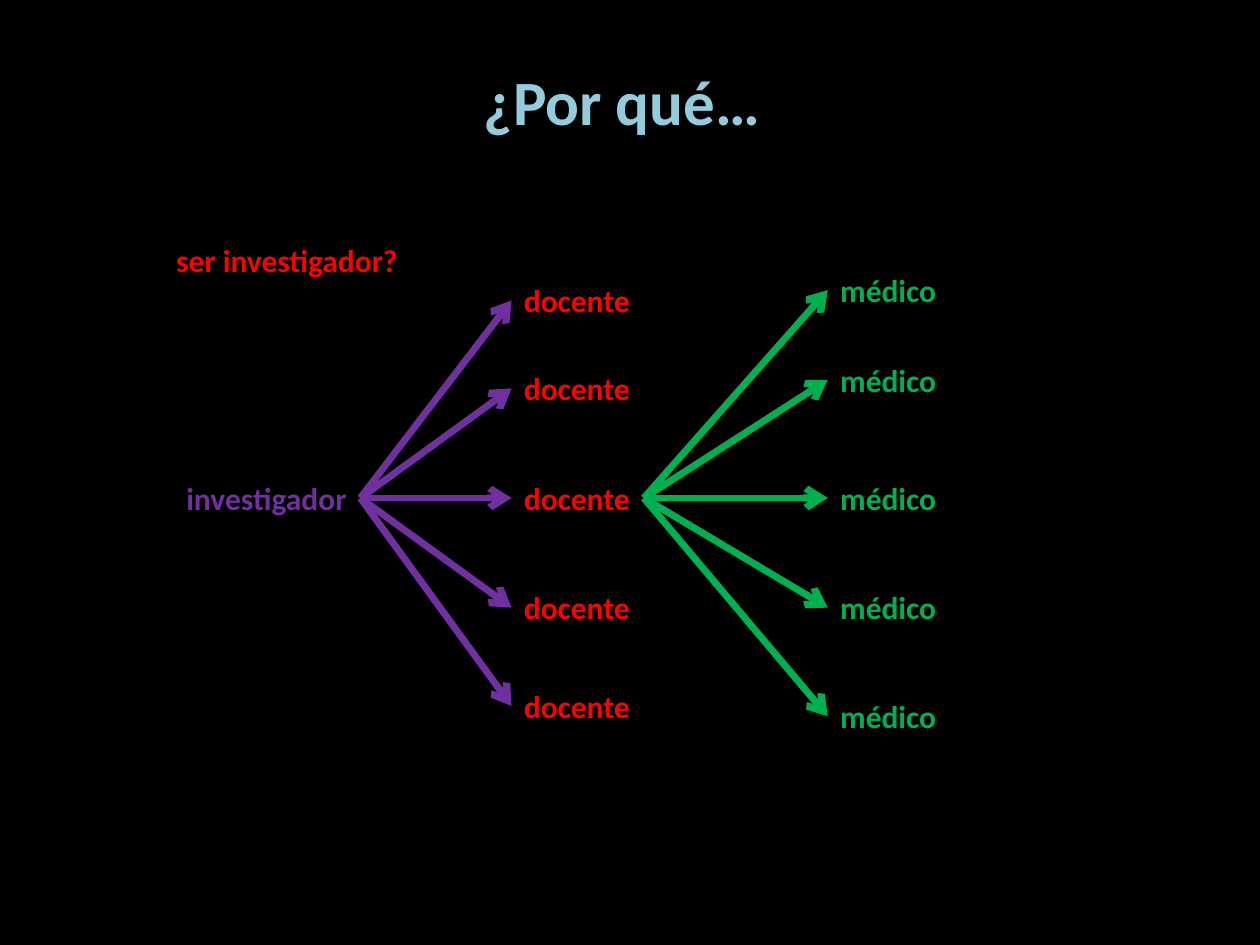
from dataclasses import dataclass

from lxml import etree
from pptx import Presentation
from pptx import util as u
from pptx.dml.color import RGBColor
from pptx.enum import shapes, text
from pptx.oxml.ns import qn


@dataclass(frozen=True)
class Theme:
    """Colours, font and sizes of the slide."""
    background: str = "000000"
    heading: str = "93CDDD"
    teacher: str = "FF0000"
    doctor: str = "00B050"
    researcher: str = "7030A0"
    font: str = "Calibri"
    heading_size: int = 36
    label_size: int = 18
    arrow_width: int = 4


@dataclass(frozen=True)
class Box:
    """A region in percent of the slide's width and height."""
    left: float
    top: float
    width: float
    height: float = 5.4

    def shifted(self, rows):
        """Return the same region moved down by a share of the height."""
        return Box(self.left, self.top + rows, self.width, self.height)

    def emu(self):
        """Return left, top, width and height in slide units."""
        return (int(SLIDE_WIDTH * self.left / 100), int(SLIDE_HEIGHT * self.top / 100),
                int(SLIDE_WIDTH * self.width / 100), int(SLIDE_HEIGHT * self.height / 100))


THEME = Theme()
SLIDE_WIDTH, SLIDE_HEIGHT = u.Inches(10), u.Inches(7.5)
TOP, LEFT, BOTTOM, RIGHT = range(4)
TEACHER_ROWS = (-20.9, -11.6, 0, 11.6, 22)
DOCTOR_ROWS = (-22, -12.5, 0, 11.6, 23.1)


def write(holder, words, color, size=THEME.label_size, bold=True):
    """Put one formatted line of text in a shape."""
    frame = holder.text_frame
    frame.text = words
    frame.word_wrap = False
    frame.auto_size = text.MSO_AUTO_SIZE.SHAPE_TO_FIT_TEXT
    frame.vertical_anchor = text.MSO_ANCHOR.TOP
    line = frame.paragraphs[0]
    line.alignment = text.PP_ALIGN.LEFT
    font = line.runs[0].font
    font.name, font.size, font.bold = THEME.font, u.Pt(size), bold
    font.color.rgb = RGBColor.from_string(color)


def add_label(slide, box, words, color):
    """Add a label in the given region."""
    label = slide.shapes.add_textbox(*box.emu())
    write(label, words, color)
    return label


def add_arrow(slide, origin, target, color):
    """Join the right side of one label to the left side of another."""
    arrow = slide.shapes.add_connector(shapes.MSO_CONNECTOR.STRAIGHT, 0, 0, 0, 0)
    arrow.begin_connect(origin, RIGHT)
    arrow.end_connect(target, LEFT)
    arrow.line.width = u.Pt(THEME.arrow_width)
    arrow.line.color.rgb = RGBColor.from_string(color)
    outline = arrow.line._get_or_add_ln()
    etree.SubElement(outline, qn("a:tailEnd"), type="arrow")
    etree.SubElement(arrow._element.spPr, qn("a:effectLst"))


def add_fan(slide, box, rows, hub, words, color, arrow_color):
    """Add labels above and below the box and return the middle one."""
    branches = {row: add_label(slide, box.shifted(row), words, color) for row in rows}
    for branch in branches.values():
        add_arrow(slide, hub, branch, arrow_color)
    return branches[0]


def add_heading(slide, box):
    """Place the slide's title."""
    title = slide.shapes.title
    title.left, title.top, title.width, title.height = box.emu()
    write(title, "¿Por qué…", THEME.heading, THEME.heading_size)


def build_slide(deck):
    """Build the slide of researchers, teachers and doctors."""
    slide = deck.slides.add_slide(deck.slide_layouts[5])
    fill = slide.background.fill
    fill.solid()
    fill.fore_color.rgb = RGBColor.from_string(THEME.background)
    add_heading(slide, Box(37.4, 5.9, 24.2, 9.4))
    add_label(slide, Box(13, 24.8, 19.7), "ser investigador?", THEME.teacher)
    researcher = add_label(slide, Box(13.8, 50, 14.8), "investigador", THEME.researcher)
    teacher = add_fan(slide, Box(40.6, 50, 10.5), TEACHER_ROWS, researcher,
                      "docente", THEME.teacher, THEME.researcher)
    add_fan(slide, Box(65.7, 50, 9.7), DOCTOR_ROWS, teacher,
            "médico", THEME.doctor, THEME.doctor)


def main():
    """Create and save the presentation."""
    deck = Presentation()
    deck.slide_width, deck.slide_height = SLIDE_WIDTH, SLIDE_HEIGHT
    build_slide(deck)
    deck.save("out.pptx")


if __name__ == "__main__":
    main()
